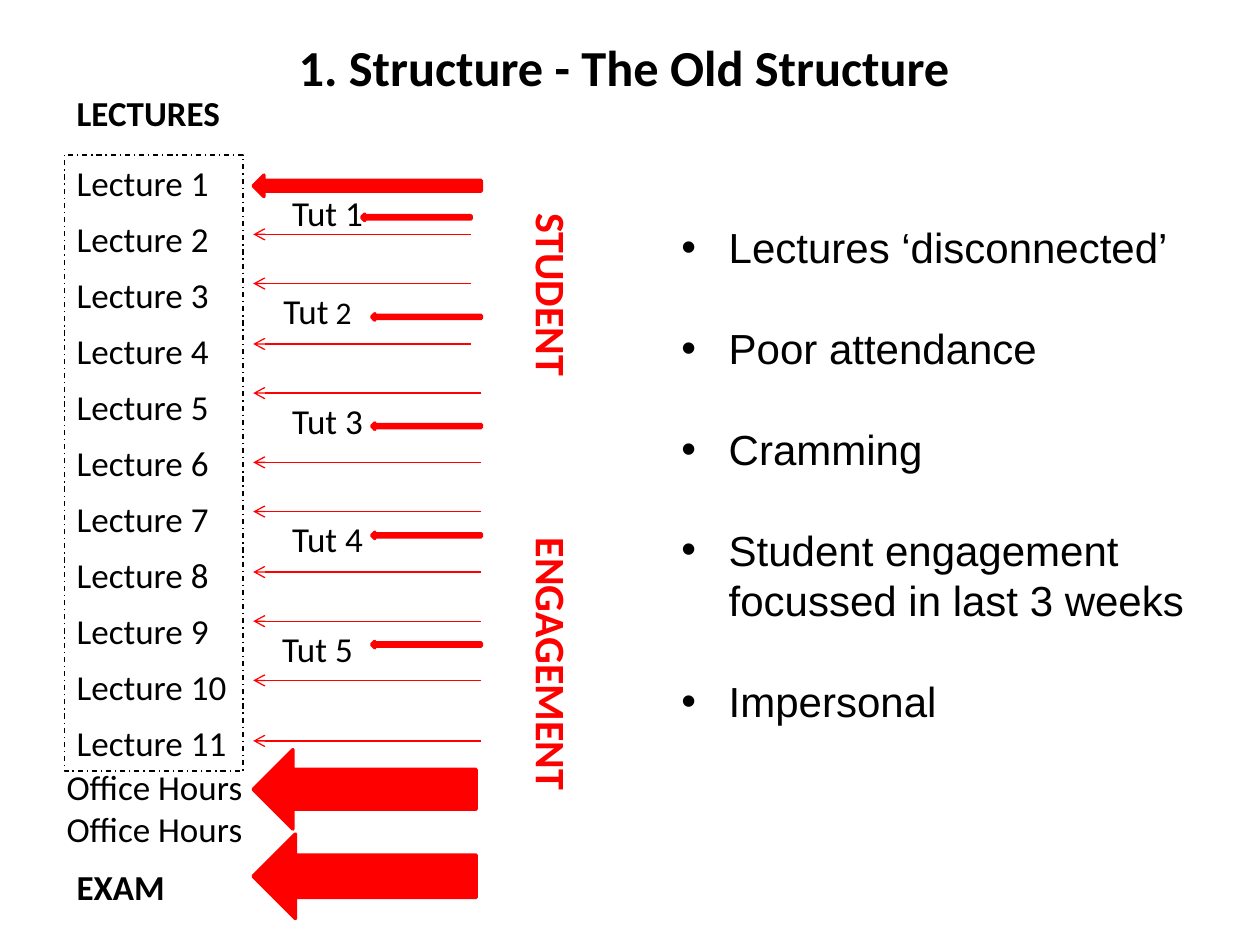
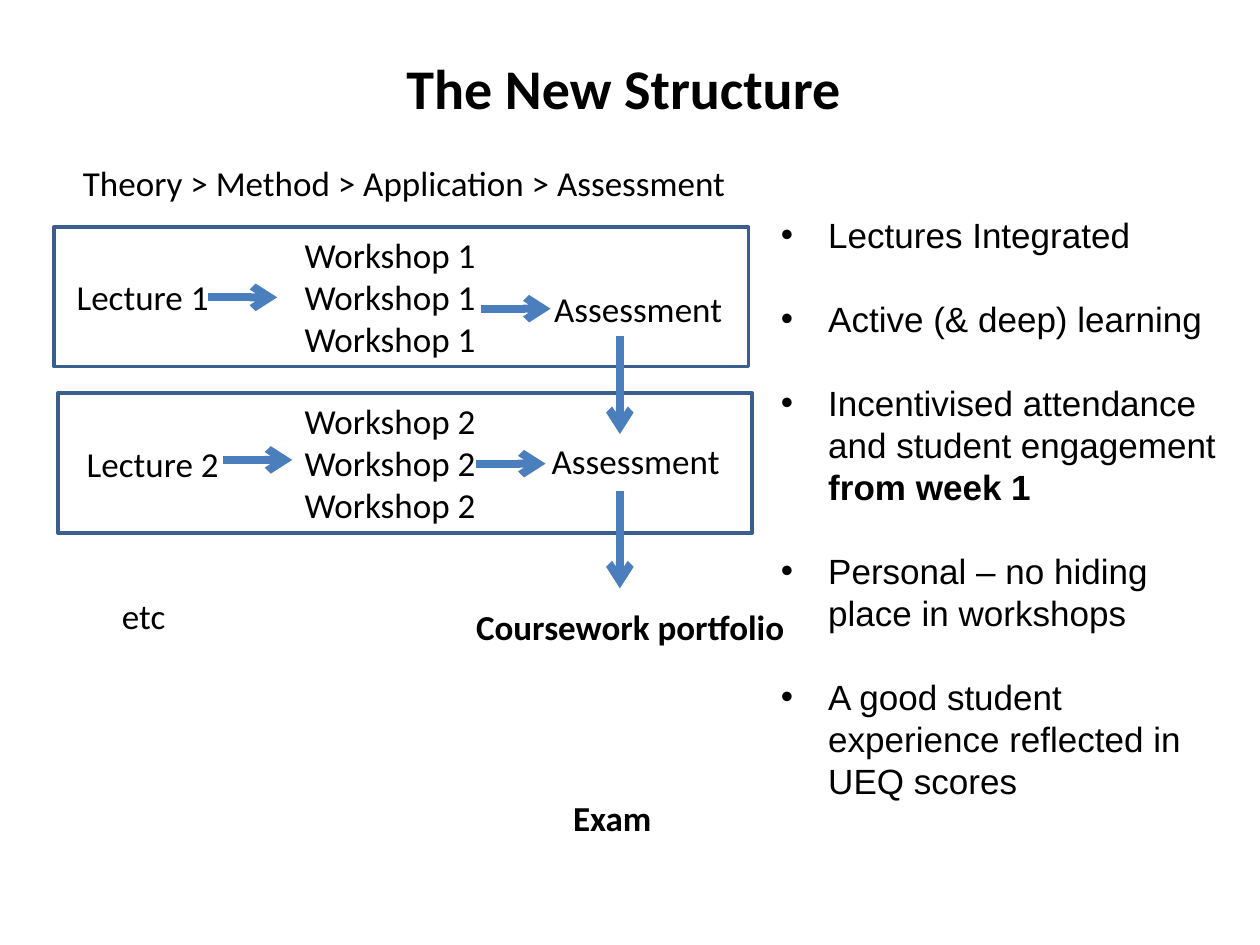
from lxml import etree
from pptx import Presentation
from pptx import util as u
from pptx.dml.color import RGBColor
from pptx.enum import dml, shapes, text
from pptx.oxml.ns import qn

COLORS = {"ink": "000000", "red": "FF0000", "frame": "3A5F8C", "flow": "4B7EBC"}
COLUMNS, ROWS = 100, 75
LEADING = 1.2
INDENT = 0.375


def rgb(name):
    return RGBColor.from_string(COLORS[name])


def format_run(run, size=20, font="Calibri", color="ink", bold=False):
    run.font.size, run.font.name, run.font.bold = u.Pt(size), font, bold
    run.font.color.rgb = rgb(color)


def write(frame, paragraphs, size=20, align="LEFT", after=0, bullets=False, **style):
    """Fill a frame; a paragraph is a string or a list of (text, overrides)."""
    frame.word_wrap = True
    frame.vertical_anchor = text.MSO_ANCHOR.TOP
    line = u.Pt(size * LEADING)
    if bullets:
        frame.margin_top += line
    elif align == "LEFT":
        frame.margin_right = 0
    for i, content in enumerate(paragraphs):
        paragraph = frame.paragraphs[0] if i == 0 else frame.add_paragraph()
        paragraph.alignment = getattr(text.PP_ALIGN, align)
        paragraph.line_spacing = line
        paragraph.space_after = u.Pt(after)
        if bullets:
            paragraph.space_before = line if i else 0
            add_bullet(paragraph)
        runs = [(content, {})] if isinstance(content, str) else content
        for words, overrides in runs:
            run = paragraph.add_run()
            run.text = words
            format_run(run, **{"size": size, **style, **overrides})


def add_bullet(paragraph):
    properties = paragraph._p.get_or_add_pPr()
    properties.set("marL", str(u.Inches(INDENT)))
    properties.set("indent", str(-u.Inches(INDENT)))
    etree.SubElement(properties, qn("a:buFont"), typeface="Arial")
    etree.SubElement(properties, qn("a:buChar"), char="•")


class Deck:
    """Holds the style and the current slide; lengths are grid columns and rows."""

    def __init__(self):
        self.file = Presentation()
        self.file.slide_width, self.file.slide_height = u.Inches(10), u.Inches(7.5)
        self.slide = None

    def x(self, columns):
        return round(self.file.slide_width * columns / COLUMNS)

    def y(self, rows):
        return round(self.file.slide_height * rows / ROWS)

    def area(self, left, top, width, height):
        return self.x(left), self.y(top), self.x(width), self.y(height)

    def new_slide(self, title, height, size):
        self.slide = self.file.slides.add_slide(self.file.slide_layouts[5])
        heading = self.slide.shapes.title
        heading.left, heading.top, heading.width, heading.height = self.area(5, 3, 90, height)
        frame = heading.text_frame
        frame.auto_size = text.MSO_AUTO_SIZE.NONE
        frame.vertical_anchor = text.MSO_ANCHOR.MIDDLE
        frame.paragraphs[0].alignment = text.PP_ALIGN.CENTER
        run = frame.paragraphs[0].add_run()
        run.text = title
        format_run(run, size=size, bold=True)

    def label(self, area, *paragraphs, rotation=0, **style):
        box = self.slide.shapes.add_textbox(*self.area(*area))
        box.rotation = rotation
        write(box.text_frame, paragraphs, **style)

    def bullets(self, area, *points, size):
        self.label(area, *points, size=size, font="Arial", bullets=True)

    def shape(self, kind, area, line, width, fill=None):
        shape = self.slide.shapes.add_shape(kind, *self.area(*area))
        shape.shadow.inherit = False
        if fill:
            shape.fill.solid()
            shape.fill.fore_color.rgb = rgb(fill)
        else:
            shape.fill.background()
        shape.line.color.rgb, shape.line.width = rgb(line), u.Pt(width)
        return shape

    def frame(self, area, line="frame", width=2):
        return self.shape(shapes.MSO_SHAPE.RECTANGLE, area, line, width)

    def block_arrow(self, *area):
        self.shape(shapes.MSO_SHAPE.LEFT_ARROW, area, "red", 2, fill="red")

    def arrow(self, start, end, color, width):
        line = self.slide.shapes.add_connector(
            shapes.MSO_CONNECTOR.STRAIGHT,
            self.x(start[0]), self.y(start[1]), self.x(end[0]), self.y(end[1]))
        line.line.color.rgb, line.line.width = rgb(color), u.Pt(width)
        etree.SubElement(line.line._get_or_add_ln(), qn("a:tailEnd"), type="arrow")
        etree.SubElement(line._element.spPr, qn("a:effectLst"))


def old_structure(deck):
    deck.new_slide("1. Structure - The Old Structure ", 4.6, 28.8)
    deck.label((5.1, 6.8, 13.4, 4.4), "LECTURES", bold=True)
    lectures = deck.frame((5.1, 12.3, 14.2, 48.9), "ink", 0.75)
    lectures.line.dash_style = dml.MSO_LINE.DASH_DOT
    write(lectures.text_frame, [f"Lecture {n}" for n in range(1, 12)], after=8)
    deck.label((4.3, 60.3, 22, 7.7), "Office Hours", "Office Hours")
    deck.label((5.1, 68.2, 13.4, 4.4), "EXAM", bold=True)

    for word, middle in (("STUDENT", 23.4), ("ENGAGEMENT", 52.7)):
        deck.label((30.1, middle - 2.5, 27.5, 5), word, rotation=90, size=24,
                   align="CENTER", color="red", bold=True)

    tutorials = [(20.1, 14.7, "Tut 1"), (19.3, 22.5, [("Tut", {}), (" 2", {"size": 18})]),
                 (20.1, 31.2, "Tut 3"), (20.1, 40.6, "Tut 4"), (19.3, 49.3, "Tut 5")]
    for left, top, name in tutorials:
        deck.label((left, top, 11.8, 4.4), name, align="CENTER")

    deck.block_arrow(20.1, 13.9, 18.1, 1.7)
    deck.block_arrow(28.7, 17, 8.7, 0.5)
    for n in range(4):
        deck.block_arrow(29.5, 24.9 + n * 8.67, 8.7, 0.5)
    deck.block_arrow(20.1, 59.5, 17.7, 6.3)
    deck.block_arrow(20.1, 66.2, 17.7, 6.7)

    low_engagement = {37.4: (18.6, 22.5, 27.3),
                      38.2: (31.2, 36.7, 40.6, 45.4, 49.3, 54, 58.8)}
    for right, rows in low_engagement.items():
        for row in rows:
            deck.arrow((right, row), (20.1, row), "red", 0.75)

    deck.bullets((53.1, 13.1, 44.9, 53.5), "Lectures ‘disconnected’", "Poor attendance",
                 "Cramming", "Student engagement focussed in last 3 weeks", "Impersonal",
                 size=24)


def new_structure(deck):
    deck.new_slide("The New Structure ", 7.8, 32)
    deck.label((5.6, 12.3, 62.4, 4.4), "Theory > Method > Application > Assessment")

    units = [(18, 4.3, (5.1, 21.4), (43, 22.3)),
             (31.2, 4.6, (5.9, 34.6), (42.8, 34.4))]
    for n, (top, left, lecture, assessment) in enumerate(units, 1):
        deck.frame((left, top, 55.1, 11.1))
        deck.label((*lecture, 13.4, 4.4), f"Lecture {n}")
        deck.label((23.2, top, 15.7, 11.1), *[f"Workshop {n}"] * 3)
        deck.label((*assessment, 16.5, 4.4), "Assessment")

    for left, row in ((16.5, 23.6), (38.2, 24.5), (17.7, 36.5), (37.8, 36.8)):
        deck.arrow((left, row), (left + 5.5, row), "flow", 4.5)
    for top in (26.7, 38.95):
        deck.arrow((49.2, top), (49.2, top + 7.75), "flow", 4.5)

    deck.label((8.7, 46.7, 13.4, 4.4), "etc")
    deck.label((36.8, 47.6, 31.8, 4.4), "Coursework portfolio", bold=True)
    deck.label((44.5, 62.7, 10.6, 4.4), "Exam", bold=True)

    deck.bullets((61, 13.1, 37, 58.2), "Lectures Integrated", "Active (& deep) learning",
                 [("Incentivised attendance and student engagement ", {}),
                  ("from week 1", {"bold": True})],
                 "Personal – no hiding place in workshops",
                 "A good student experience reflected in UEQ scores", size=20)


def main():
    deck = Deck()
    old_structure(deck)
    new_structure(deck)
    deck.file.save("out.pptx")


if __name__ == "__main__":
    main()
